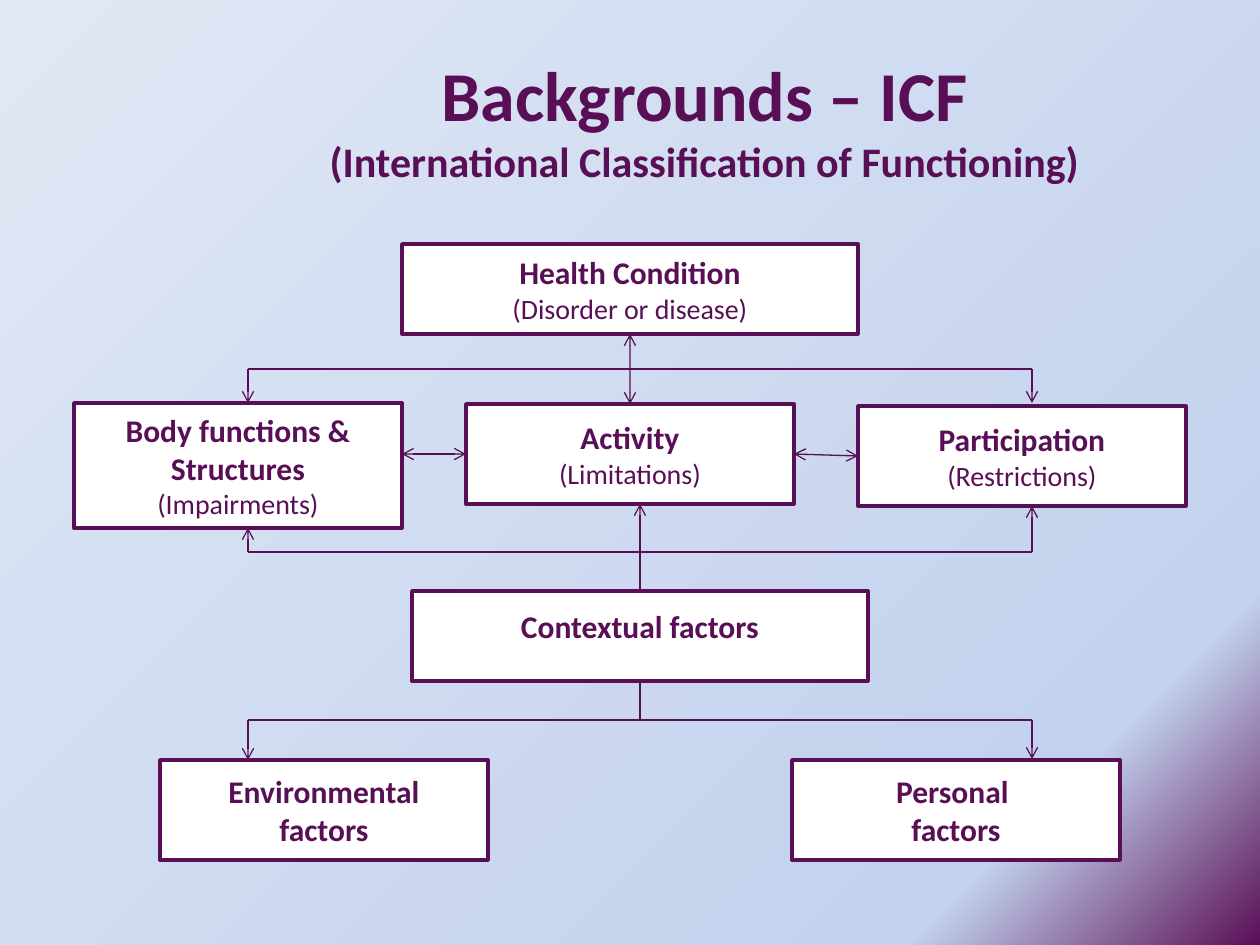
from copy import deepcopy
from typing import Any, NamedTuple, Optional

from lxml import etree
from pptx import Presentation
from pptx.dml.color import RGBColor
from pptx.enum.shapes import MSO_CONNECTOR, MSO_SHAPE
from pptx.enum.text import MSO_ANCHOR, MSO_AUTO_SIZE, PP_ALIGN
from pptx.oxml.ns import qn
from pptx.util import Emu, Pt

RECTANGLE = MSO_SHAPE.RECTANGLE
STRAIGHT = MSO_CONNECTOR.STRAIGHT
CENTER = PP_ALIGN.CENTER
TOP, MIDDLE = MSO_ANCHOR.TOP, MSO_ANCHOR.MIDDLE
GROW = MSO_AUTO_SIZE.SHAPE_TO_FIT_TEXT
TOP_SIDE, LEFT_SIDE, BOTTOM_SIDE, RIGHT_SIDE = range(4)
EMU_PER_PX = 914400 / 126


class Theme(NamedTuple):
    font: str = "Calibri"
    ink: RGBColor = RGBColor(0x59, 0x0F, 0x56)
    paper: RGBColor = RGBColor(0xFF, 0xFF, 0xFF)
    sky: RGBColor = RGBColor(0xC2, 0xD1, 0xED)
    mist: RGBColor = RGBColor(0xE1, 0xE8, 0xF5)
    title: int = 40
    subtitle: int = 24
    label: int = 18
    note: int = 16
    border: float = 2
    rule: float = 0.75


THEME = Theme()


class Line(NamedTuple):
    text: str
    size: int = THEME.label
    bold: bool = True


class Box(NamedTuple):
    name: str
    left: int
    top: int
    width: int
    height: int
    lines: tuple[Line, ...]
    bottom_inset: int = 6


class Joint(NamedTuple):
    box: str
    side: int


class Link(NamedTuple):
    start: tuple[int, int]
    end: tuple[int, int]
    head: bool = False
    tail: bool = False
    start_joint: Optional[Joint] = None
    end_joint: Optional[Joint] = None


WIDE, NARROW = 456, 328
LEFT_X, RIGHT_X, HEALTH_X, CONTEXT_X = 248, 1032, 630, 640
UPPER_Y, MIDDLE_Y, LOWER_Y, FACTOR_Y = 369, 454, 552, 720

TITLE = (
    Line("Backgrounds – ICF", THEME.title),
    Line("(International Classification of Functioning)", THEME.subtitle),
)


def note(text: str) -> Line:
    return Line(text, THEME.note, False)


BOXES = (
    Box("health", 402, 244, WIDE, 90,
        (Line("Health Condition"), note("(Disorder or disease)"))),
    Box("body", 74, 403, NARROW, 125,
        (Line("Body functions &"), Line("Structures"), note("(Impairments)"))),
    Box("activity", 466, 404, NARROW, 100,
        (Line("Activity"), note("(Limitations)"))),
    Box("participation", 858, 406, NARROW, 100,
        (Line("Participation"), note("(Restrictions)"))),
    Box("context", 412, 591, WIDE, 90, (Line("Contextual factors"),), 26),
    Box("environment", 160, 760, NARROW, 100,
        (Line("Environmental"), Line("factors"))),
    Box("personal", 792, 760, NARROW, 100,
        (Line("Personal "), Line("factors"))),
)

LINKS = (
    *(Link((LEFT_X, y), (RIGHT_X, y)) for y in (UPPER_Y, LOWER_Y, FACTOR_Y)),
    Link((HEALTH_X, 334), (HEALTH_X, 404), True, True,
         Joint("health", BOTTOM_SIDE), Joint("activity", TOP_SIDE)),
    Link((402, MIDDLE_Y), (466, MIDDLE_Y), True, True,
         end_joint=Joint("activity", LEFT_SIDE)),
    Link((794, MIDDLE_Y), (858, 456), True, True,
         Joint("activity", RIGHT_SIDE), Joint("participation", LEFT_SIDE)),
    Link((LEFT_X, UPPER_Y), (LEFT_X, 403), tail=True),
    Link((RIGHT_X, UPPER_Y), (RIGHT_X, 403), tail=True),
    Link((LEFT_X, LOWER_Y), (LEFT_X, 528), tail=True),
    Link((RIGHT_X, LOWER_Y), (RIGHT_X, 506), tail=True),
    Link((CONTEXT_X, 591), (CONTEXT_X, 504), tail=True,
         start_joint=Joint("context", TOP_SIDE)),
    Link((CONTEXT_X, 681), (CONTEXT_X, FACTOR_Y),
         start_joint=Joint("context", BOTTOM_SIDE)),
    Link((LEFT_X, FACTOR_Y), (LEFT_X, 760), tail=True),
    Link((RIGHT_X, FACTOR_Y), (RIGHT_X, 759), tail=True),
)


def px(value: int) -> Emu:
    return Emu(round(value * EMU_PER_PX))


def apply_format(target: Any, values: dict[str, Any]) -> None:
    for name, value in values.items():
        setattr(target, name, value)


def write_lines(frame: Any, lines: tuple[Line, ...]) -> None:
    for index, line in enumerate(lines):
        para = frame.add_paragraph() if index else frame.paragraphs[0]
        para.alignment = CENTER
        span = para.add_run()
        span.text = line.text
        apply_format(span.font, {"name": THEME.font, "size": Pt(line.size), "bold": line.bold})
        span.font.color.rgb = THEME.ink


def paint_background(page: Any) -> None:
    fill = page.background.fill
    fill.gradient()
    fill.gradient_angle = 135
    stop_list = next(page.element.iter(qn("a:gsLst")))
    stop_list.append(deepcopy(stop_list[-1]))
    colors = ((0, THEME.ink), (0.16, THEME.sky), (1, THEME.mist))
    for stop, (position, color) in zip(fill.gradient_stops, colors):
        stop.position = position
        stop.color.rgb = color


def draw_title(page: Any) -> None:
    title = page.shapes.add_textbox(px(213), px(45), px(983), px(149))
    apply_format(title.text_frame, {"word_wrap": True, "auto_size": GROW, "vertical_anchor": TOP})
    write_lines(title.text_frame, TITLE)


def draw_box(page: Any, box: Box) -> Any:
    shape = page.shapes.add_shape(
        RECTANGLE, px(box.left), px(box.top), px(box.width), px(box.height))
    shape.shadow.inherit = False
    shape.fill.solid()
    shape.fill.fore_color.rgb = THEME.paper
    shape.line.color.rgb = THEME.ink
    shape.line.width = Pt(THEME.border)
    apply_format(shape.text_frame, {
        "word_wrap": True, "vertical_anchor": MIDDLE, "margin_bottom": px(box.bottom_inset)})
    write_lines(shape.text_frame, box.lines)
    return shape


def draw_link(page: Any, link: Link, shapes: dict[str, Any]) -> None:
    connector = page.shapes.add_connector(STRAIGHT, *map(px, link.start + link.end))
    if link.start_joint:
        connector.begin_connect(shapes[link.start_joint.box], link.start_joint.side)
    if link.end_joint:
        connector.end_connect(shapes[link.end_joint.box], link.end_joint.side)
    connector.line.color.rgb = THEME.ink
    connector.line.width = Pt(THEME.rule)
    properties = connector.element.spPr
    outline = properties.find(qn("a:ln"))
    for tag, shown in (("a:headEnd", link.head), ("a:tailEnd", link.tail)):
        if shown:
            etree.SubElement(outline, qn(tag), type="arrow")
    etree.SubElement(properties, qn("a:effectLst"))


def main() -> None:
    deck = Presentation()
    apply_format(deck, {"slide_width": px(1260), "slide_height": px(945)})
    page = deck.slides.add_slide(deck.slide_layouts[6])
    paint_background(page)
    draw_title(page)
    shapes = {box.name: draw_box(page, box) for box in BOXES}
    for link in LINKS:
        draw_link(page, link, shapes)
    deck.save("out.pptx")


if __name__ == "__main__":
    main()
